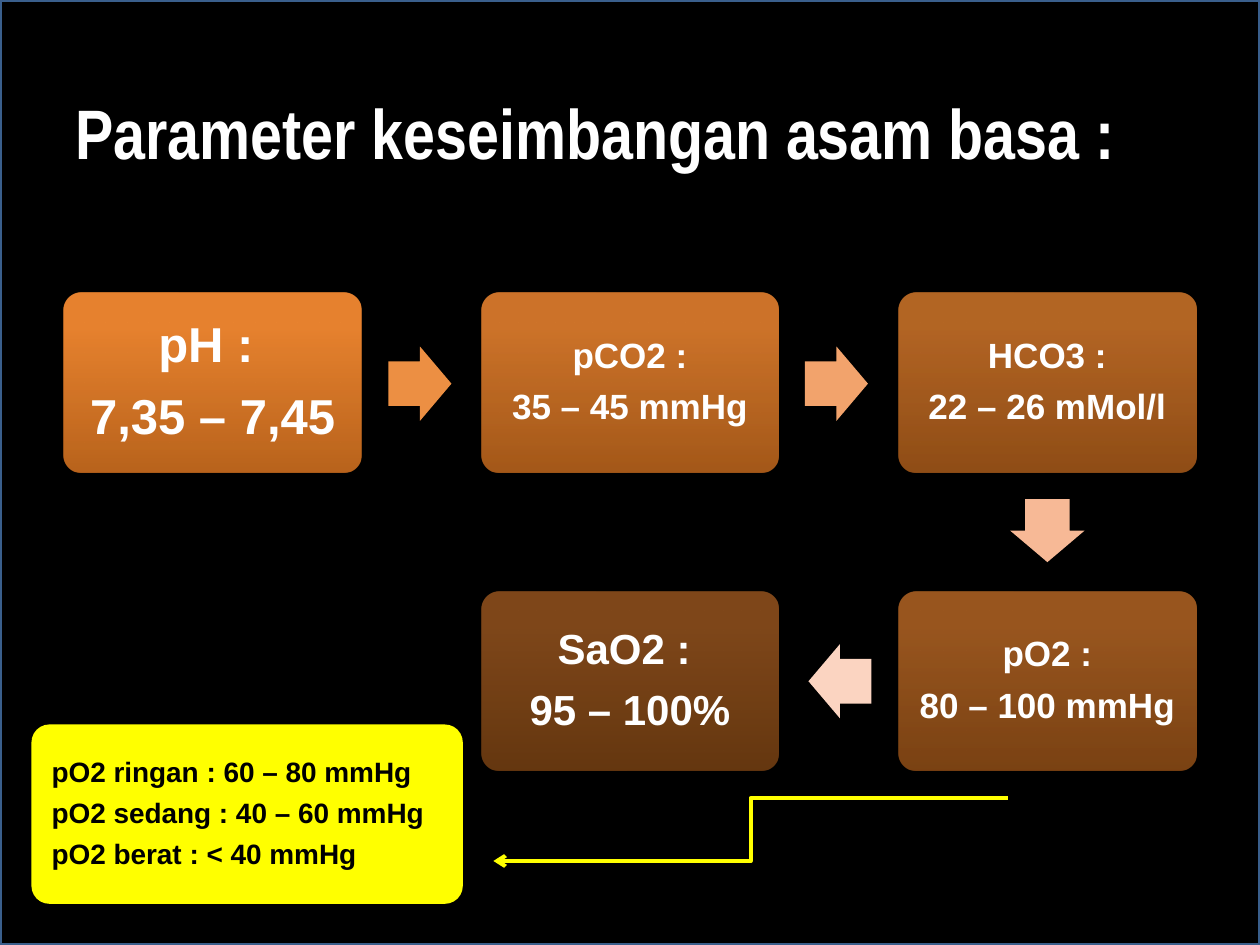
from lxml import etree
from pptx import Presentation
from pptx.dml.color import RGBColor
from pptx.enum import shapes, text
from pptx.oxml.ns import qn
from pptx.util import Pt

BLACK = RGBColor(0, 0, 0)
WHITE = RGBColor(255, 255, 255)
YELLOW = RGBColor(255, 255, 0)
FRAME = RGBColor(0x3A, 0x5F, 0x8C)
DARK_ORANGE = RGBColor(0xCC, 0x6E, 0x20)
BRIGHT_ORANGE = RGBColor(0xFF, 0x90, 0x34)
ARROW_1 = RGBColor(0xEC, 0x8F, 0x43)
ARROW_2 = RGBColor(0xF2, 0xA3, 0x6C)
ARROW_3 = RGBColor(0xF7, 0xB9, 0x96)
ARROW_4 = RGBColor(0xFB, 0xD4, 0xC1)

deck = Presentation()
deck.slide_width, deck.slide_height = Pt(720), Pt(540)
slide = deck.slides.add_slide(deck.slide_layouts[6])


def add_block(kind, left, top, width, height, fill=None, adjust=()):
    block = slide.shapes.add_shape(kind, Pt(left), Pt(top), Pt(width), Pt(height))
    block.shadow.inherit = False
    block.line.fill.background()
    if fill is not None:
        block.fill.solid()
        block.fill.fore_color.rgb = fill
    for index, value in enumerate(adjust):
        block.adjustments[index] = value
    return block


def write(frame, lines, size, color=WHITE, font="Arial", align=text.PP_ALIGN.CENTER,
          margin=7.2, line_spacing=0.9, space_after=0.38):
    frame.word_wrap = True
    frame.vertical_anchor = text.MSO_ANCHOR.MIDDLE
    frame.margin_left = frame.margin_right = Pt(margin)
    frame.margin_top = frame.margin_bottom = Pt(margin)
    for index, line in enumerate(lines):
        paragraph = frame.add_paragraph() if index else frame.paragraphs[0]
        paragraph.alignment = align
        paragraph.line_spacing = line_spacing
        paragraph.space_after = Pt(round(size * space_after, 1))
        run = paragraph.add_run()
        run.text = line
        run.font.name, run.font.size, run.font.bold = font, Pt(size), True
        run.font.color.rgb = color


backdrop = add_block(shapes.MSO_SHAPE.RECTANGLE, 0, 0, 720, 540, BLACK)
backdrop.line.color.rgb = FRAME
backdrop.line.width = Pt(2)

parameters = [
    (0, 0, ["pH : ", "7,35 – 7,45"], 28, 8.4),
    (1, 0, ["pCO2 :", "35 – 45 mmHg"], 20, 6),
    (2, 0, ["HCO3 :", "22 – 26 mMol/l"], 20, 6),
    (2, 1, ["pO2 :", "80 – 100 mmHg"], 20, 6),
    (1, 1, ["SaO2 : ", "95 – 100%"], 24, 7.2),
]
for step, (column, row, lines, size, margin) in enumerate(parameters):
    parameter = add_block(shapes.MSO_SHAPE.ROUNDED_RECTANGLE, 36.5 + 238.5 * column,
                          167.5 + 170.5 * row, 170, 102.5, adjust=[0.1])
    parameter.fill.gradient()
    parameter.fill.gradient_angle = 90
    shades = [(0, DARK_ORANGE), (0.8, BRIGHT_ORANGE)]
    for stop, (position, shade) in zip(parameter.fill.gradient_stops, shades):
        stop.position = position
        stop.color.rgb = shade
    for shade in parameter.fill._xPr.iter(qn("a:srgbClr")):
        etree.SubElement(shade, qn("a:alpha"), val=str(90000 - 10000 * step))
    write(parameter.text_frame, lines, size, margin=margin)

for left, top, turn, color in [(222, 198, 0, ARROW_1), (460, 198, 0, ARROW_2),
                               (580.5, 282, 90, ARROW_3), (462, 368, 180, ARROW_4)]:
    arrow = add_block(shapes.MSO_SHAPE.RIGHT_ARROW, left, top, 36, 42.5, color, [0.6, 0.5])
    arrow.rotation = turn

title = slide.shapes.add_textbox(Pt(36), Pt(18), Pt(654), Pt(114))
write(title.text_frame, ["Parameter keseimbangan asam basa :"], 40, font="Arial Narrow",
      align=text.PP_ALIGN.LEFT, line_spacing=1, space_after=0)

hypoxemia = add_block(shapes.MSO_SHAPE.ROUNDED_RECTANGLE, 18, 414, 246.5, 102.5, YELLOW, [0.1])
write(hypoxemia.text_frame,
      ["pO2 ringan : 60 – 80 mmHg", "pO2 sedang : 40 – 60 mmHg", "pO2 berat : < 40 mmHg"],
      16, color=BLACK, align=text.PP_ALIGN.LEFT, margin=8.5)

pointer = slide.shapes.add_connector(shapes.MSO_CONNECTOR.ELBOW, Pt(576), Pt(456), Pt(282), Pt(492))
pointer.line.color.rgb = YELLOW
pointer.line.width = Pt(2.25)
etree.SubElement(pointer.line._get_or_add_ln(), qn("a:tailEnd"), type="arrow")
etree.SubElement(pointer._element.spPr, qn("a:effectLst"))

deck.save("out.pptx")
